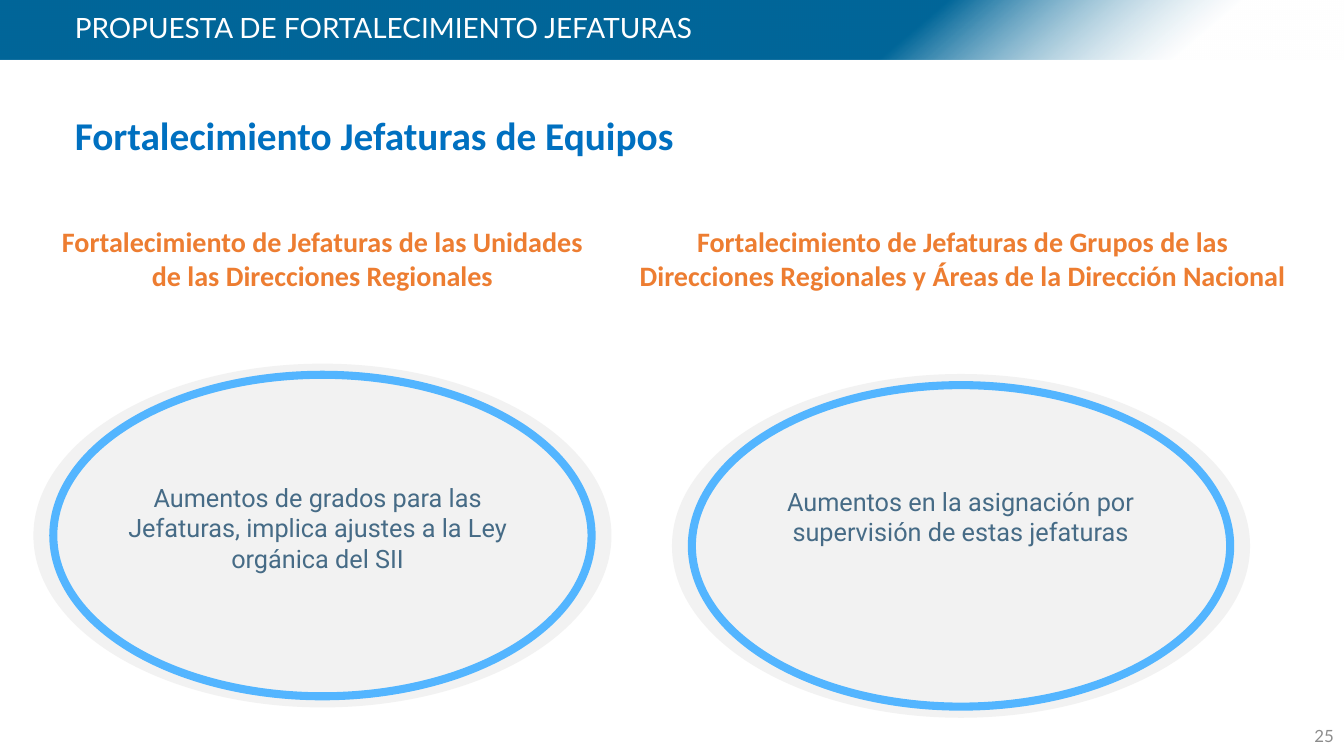
from dataclasses import dataclass

from lxml import etree
from pptx import Presentation
from pptx.dml.color import RGBColor
from pptx.enum.shapes import MSO_SHAPE
from pptx.enum.text import MSO_ANCHOR, MSO_AUTO_SIZE, PP_ALIGN
from pptx.oxml.ns import qn
from pptx.util import Cm, Pt

RECTANGLE, OVAL = MSO_SHAPE.RECTANGLE, MSO_SHAPE.OVAL
LEFT, CENTER, RIGHT = PP_ALIGN.LEFT, PP_ALIGN.CENTER, PP_ALIGN.RIGHT
TOP, MIDDLE = MSO_ANCHOR.TOP, MSO_ANCHOR.MIDDLE
NO_FIT = MSO_AUTO_SIZE.NONE


@dataclass(frozen=True)
class Style:
    """Font settings for one kind of text."""
    name: str
    size: float
    color: str
    bold: bool = False


@dataclass(frozen=True)
class Theme:
    """Colours and type sizes of the page."""
    banner: str = "006699"
    banner_end: str = "FFFFFF"
    disc: str = "F2F2F2"
    ring: str = "53B5FF"
    ring_width: float = 5.75
    title: Style = Style("Lato", 19.9, "FFFFFF")
    number: Style = Style("Lato", 12, "8C8C8C")
    heading: Style = Style("Calibri", 28, "0070C0", True)
    column: Style = Style("Calibri", 20, "ED7D31", True)
    body: Style = Style("Roboto", 18, "466B86")


THEME = Theme()
SLIDE_WIDTH, SLIDE_HEIGHT = 33.78, 19
COLUMN_TOP, COLUMN_HEIGHT = 5.49, 2.62
DISC_SIZE = (14.53, 8.64)
RING_INSET = (0.5, 0.28)
MESSAGE_WIDTH = 11.25
COLUMNS = [
    {
        "title": "Fortalecimiento de Jefaturas de las Unidades "
                 "de las Direcciones Regionales",
        "title_left": 0.84, "title_width": 14.53,
        "disc": (0.84, 9.14),
        "message": "Aumentos de grados para las Jefaturas, "
                   "implica ajustes a la Ley orgánica del SII",
        "message_at": (2.36, 11.99), "message_height": 2.57,
    },
    {
        "title": "Fortalecimiento de Jefaturas de Grupos de las "
                 "Direcciones Regionales y Áreas de la Dirección Nacional",
        "title_left": 15.75, "title_width": 16.89,
        "disc": (16.89, 9.4),
        "message": "Aumentos en la asignación por "
                   "supervisión de estas jefaturas",
        "message_at": (18.52, 12.09), "message_height": 1.8,
    },
]


def lengths(*values):
    """Convert centimetre values to slide lengths."""
    return [Cm(value) for value in values]


def set_all(target, values):
    """Set every attribute of target named in values."""
    for name, value in values.items():
        setattr(target, name, value)


def write(box, text, style, align=LEFT, anchor=TOP, wrap=True, margins=(0.25, 0.13)):
    """Put one formatted paragraph in a box."""
    side, edge = lengths(*margins)
    frame = box.text_frame
    set_all(frame, {
        "auto_size": NO_FIT, "word_wrap": wrap, "vertical_anchor": anchor,
        "margin_left": side, "margin_right": side,
        "margin_top": edge, "margin_bottom": edge,
    })
    para = frame.paragraphs[0]
    para.alignment = align
    span = para.add_run()
    span.text = text
    set_all(span.font, {"name": style.name, "size": Pt(style.size), "bold": style.bold})
    span.font.color.rgb = RGBColor.from_string(style.color)
    return para


def add_text(shapes, bounds, text, style, **options):
    """Add a text box with one paragraph."""
    write(shapes.add_textbox(*lengths(*bounds)), text, style, **options)


def add_shape(shapes, kind, bounds, fill=None, line=None):
    """Add a flat shape with an optional fill and outline."""
    shape = shapes.add_shape(kind, *lengths(*bounds))
    shape.shadow.inherit = False
    for paint, color in ((shape.fill, fill), (shape.line.fill, line)):
        if color:
            paint.solid()
            paint.fore_color.rgb = RGBColor.from_string(color)
        else:
            paint.background()
    return shape


def add_banner(page):
    """Add the fading band behind the title."""
    banner = add_shape(page.shapes, RECTANGLE, (0, 0, SLIDE_WIDTH, 1.5))
    banner.fill.gradient()
    banner.fill.gradient_angle = 310
    stops = banner.fill.gradient_stops
    for stop, color, position in zip(stops, (THEME.banner, THEME.banner_end), (0.67, 0.88)):
        stop.color.rgb = RGBColor.from_string(color)
        stop.position = position
    end_color = list(banner.element.iter(qn("a:srgbClr")))[-1]
    etree.SubElement(end_color, qn("a:alpha"), val="42000")
    page.shapes.title.element.addprevious(banner.element)


def add_title(page, text):
    """Place and format the title placeholder."""
    title = page.shapes.title
    left, top, width, height = lengths(1.63, 0.33, 23.65, 0.84)
    set_all(title, {"left": left, "top": top, "width": width, "height": height})
    para = write(title, text, THEME.title, anchor=MIDDLE)
    para.line_spacing = 0.9


def add_column(page, column):
    """Add a column heading and its ringed message."""
    add_text(page.shapes,
             (column["title_left"], COLUMN_TOP, column["title_width"], COLUMN_HEIGHT),
             column["title"], THEME.column, align=CENTER, margins=(0.3, 0.15))
    shapes = page.shapes.add_group_shape().shapes
    add_shape(shapes, OVAL, (*column["disc"], *DISC_SIZE), fill=THEME.disc)
    ring_at = [start + inset for start, inset in zip(column["disc"], RING_INSET)]
    ring_size = [size - 2 * inset for size, inset in zip(DISC_SIZE, RING_INSET)]
    ring = add_shape(shapes, OVAL, (*ring_at, *ring_size), line=THEME.ring)
    ring.line.width = Pt(THEME.ring_width)
    add_text(shapes, (*column["message_at"], MESSAGE_WIDTH, column["message_height"]),
             column["message"], THEME.body, align=CENTER)


def main():
    """Build the slide and save the deck."""
    deck = Presentation()
    deck.slide_width, deck.slide_height = lengths(SLIDE_WIDTH, SLIDE_HEIGHT)
    page = deck.slides.add_slide(deck.slide_layouts.get_by_name("Title Only"))
    add_banner(page)
    add_title(page, "PROPUESTA DE FORTALECIMIENTO JEFATURAS")
    add_text(page.shapes, (32.41, 17.98, 1.37, 1.02), "25", THEME.number,
             align=RIGHT, anchor=MIDDLE)
    add_text(page.shapes, (1.63, 2.67, 15.72, 1.45),
             "Fortalecimiento Jefaturas de Equipos", THEME.heading, wrap=False)
    for column in COLUMNS:
        add_column(page, column)
    deck.save("out.pptx")


if __name__ == "__main__":
    main()
